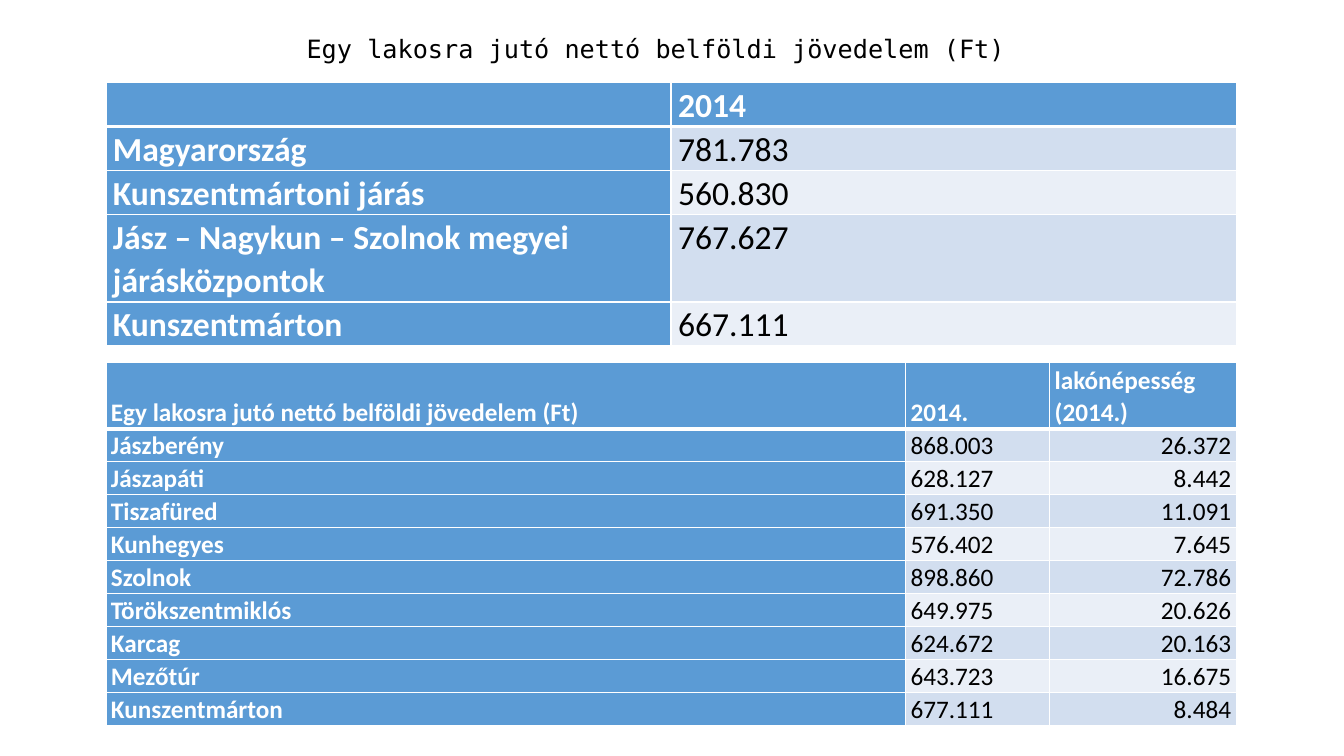
from dataclasses import dataclass

from lxml.etree import fromstring
from pptx import Presentation
from pptx.dml.color import RGBColor
from pptx.enum.text import MSO_ANCHOR, MSO_AUTO_SIZE, PP_ALIGN
from pptx.util import Inches, Pt

DRAWING = "http://schemas.openxmlformats.org/drawingml/2006/main"
HEADING = "Egy lakosra jutó nettó belföldi jövedelem (Ft)"


@dataclass(frozen=True)
class Theme:
    blue: str = "5B9BD5"
    bands: tuple = ("D2DEEF", "EAEFF7")
    white: str = "FFFFFF"
    black: str = "000000"
    body_font: str = "Calibri"
    title_font: str = "DejaVu Sans Mono"
    title_size: int = 18
    region_size: int = 24
    town_size: int = 18
    line_spacing: float = 1.07
    thin: int = 1
    thick: int = 3


@dataclass(frozen=True)
class Box:
    left: int
    top: int
    width: int
    height: int


@dataclass(frozen=True)
class TableLook:
    size: int
    inset: float
    anchor: MSO_ANCHOR
    columns: tuple
    rows: tuple
    aligns: tuple


THEME = Theme()

REGIONS = (
    ("", "2014"),
    ("Magyarország", "781.783"),
    ("Kunszentmártoni járás", "560.830"),
    ("Jász – Nagykun – Szolnok megyei járásközpontok", "767.627"),
    ("Kunszentmárton", "667.111"),
)
REGION_LOOK = TableLook(
    THEME.region_size, 0.07, MSO_ANCHOR.TOP, (1, 1), (1, 1, 1, 2, 1),
    (PP_ALIGN.LEFT, PP_ALIGN.LEFT),
)

TOWNS = (
    (HEADING, "2014.", "lakónépesség (2014.)"),
    ("Jászberény", "868.003", "26.372"),
    ("Jászapáti", "628.127", "8.442"),
    ("Tiszafüred", "691.350", "11.091"),
    ("Kunhegyes", "576.402", "7.645"),
    ("Szolnok", "898.860", "72.786"),
    ("Törökszentmiklós", "649.975", "20.626"),
    ("Karcag", "624.672", "20.163"),
    ("Mezőtúr", "643.723", "16.675"),
    ("Kunszentmárton", "677.111", "8.484"),
)
TOWN_LOOK = TableLook(
    THEME.town_size, 0.05, MSO_ANCHOR.BOTTOM, (7.93, 1.43, 1.85), (2,) + (1,) * 9,
    (PP_ALIGN.LEFT, PP_ALIGN.LEFT, PP_ALIGN.RIGHT),
)


def percent_box(deck, left, top, width, height):
    across, down = deck.slide_width / 100, deck.slide_height / 100
    return Box(int(left * across), int(top * down), int(width * across), int(height * down))


def format_span(span, font, size, color, bold):
    span.font.name = font
    span.font.size = Pt(size)
    span.font.bold = bold
    span.font.color.rgb = RGBColor.from_string(color)


def add_title(page, box):
    title = page.shapes.title
    title.left, title.top, title.width, title.height = box.left, box.top, box.width, box.height
    title.fill.solid()
    title.fill.fore_color.rgb = RGBColor.from_string(THEME.white)
    frame = title.text_frame
    frame.text = HEADING
    frame.word_wrap = False
    frame.auto_size = MSO_AUTO_SIZE.NONE
    frame.vertical_anchor = MSO_ANCHOR.TOP
    frame.margin_left = frame.margin_right = Inches(0.1)
    frame.margin_top = frame.margin_bottom = Inches(0.01)
    para = frame.paragraphs[0]
    para.alignment = PP_ALIGN.LEFT
    format_span(para.runs[0], THEME.title_font, THEME.title_size, THEME.black, False)


def add_borders(cell, row):
    top = THEME.thick if row == 1 else THEME.thin
    bottom = THEME.thick if row == 0 else THEME.thin
    sides = {"lnL": THEME.thin, "lnR": THEME.thin, "lnT": top, "lnB": bottom}
    properties = cell._tc.get_or_add_tcPr()
    for order, (side, width) in enumerate(sides.items()):
        properties.insert(order, fromstring(
            f'<a:{side} xmlns:a="{DRAWING}" w="{Pt(width)}"><a:solidFill>'
            f'<a:srgbClr val="{THEME.white}"/></a:solidFill></a:{side}>'
        ))


def format_cell(cell, text, row, column, look):
    is_label = row == 0 or column == 0
    fill = THEME.blue if is_label else THEME.bands[(row - 1) % 2]
    cell.fill.solid()
    cell.fill.fore_color.rgb = RGBColor.from_string(fill)
    cell.margin_left = cell.margin_right = Inches(look.inset)
    cell.margin_top = cell.margin_bottom = 0
    cell.vertical_anchor = look.anchor
    cell.text_frame.text = text
    para = cell.text_frame.paragraphs[0]
    para.line_spacing = THEME.line_spacing
    para.alignment = PP_ALIGN.LEFT if is_label else look.aligns[column]
    color = THEME.white if is_label else THEME.black
    for span in para.runs:
        format_span(span, THEME.body_font, look.size, color, is_label)
    add_borders(cell, row)


def add_income_table(page, box, records, look):
    frame = page.shapes.add_table(
        len(records), len(look.columns), box.left, box.top, box.width, box.height
    )
    table = frame.table
    table.first_col = True
    for column, share in zip(table.columns, look.columns):
        column.width = int(box.width * share / sum(look.columns))
    for row, share in zip(table.rows, look.rows):
        row.height = int(box.height * share / sum(look.rows))
    for row, record in enumerate(records):
        for column, text in enumerate(record):
            format_cell(table.cell(row, column), text, row, column, look)


def add_income_page(deck):
    page = deck.slides.add_slide(deck.slide_layouts.get_by_name("Title Only"))
    add_title(page, percent_box(deck, 22.06, 4.27, 77.94, 6.67))
    add_income_table(page, percent_box(deck, 7.88, 10.93, 84.1, 34.4), REGIONS, REGION_LOOK)
    add_income_table(page, percent_box(deck, 7.88, 48, 84.1, 47.73), TOWNS, TOWN_LOOK)


def main():
    deck = Presentation()
    deck.slide_width, deck.slide_height = Inches(13.33), Inches(7.5)
    add_income_page(deck)
    deck.save("out.pptx")


if __name__ == "__main__":
    main()
